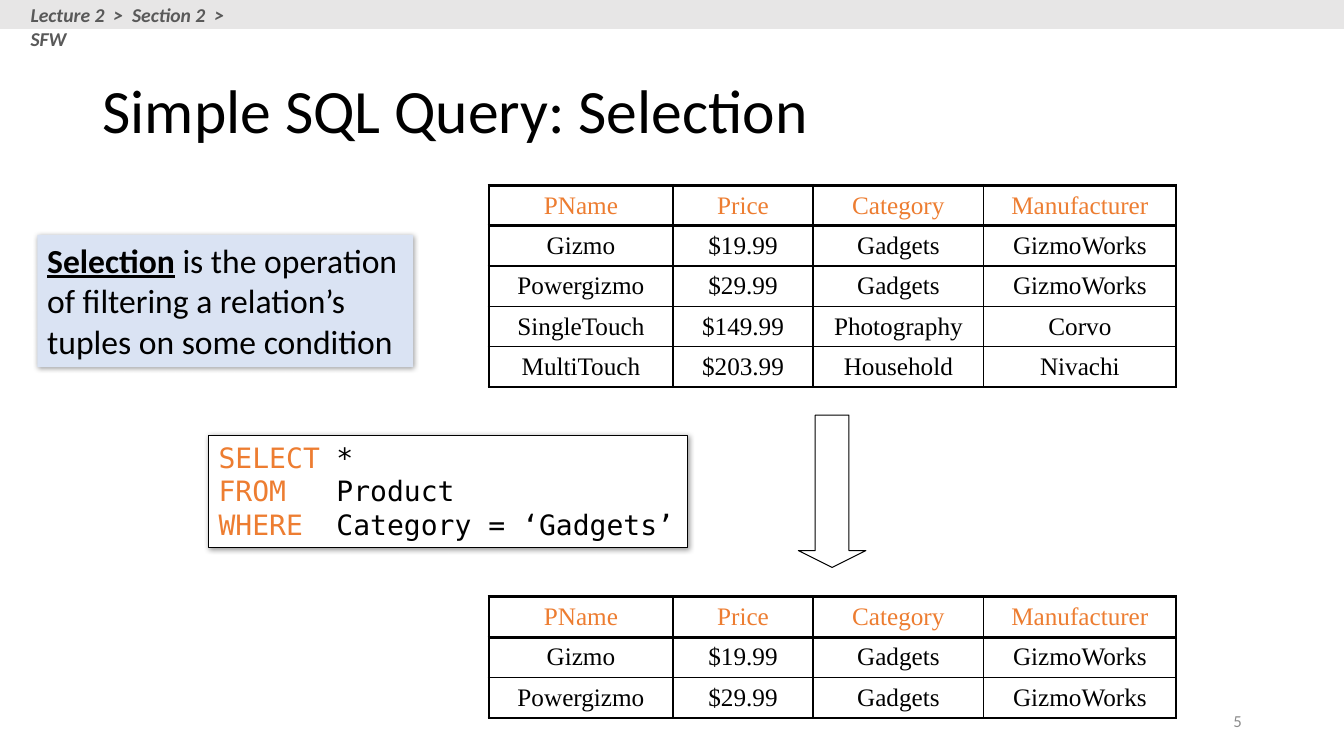
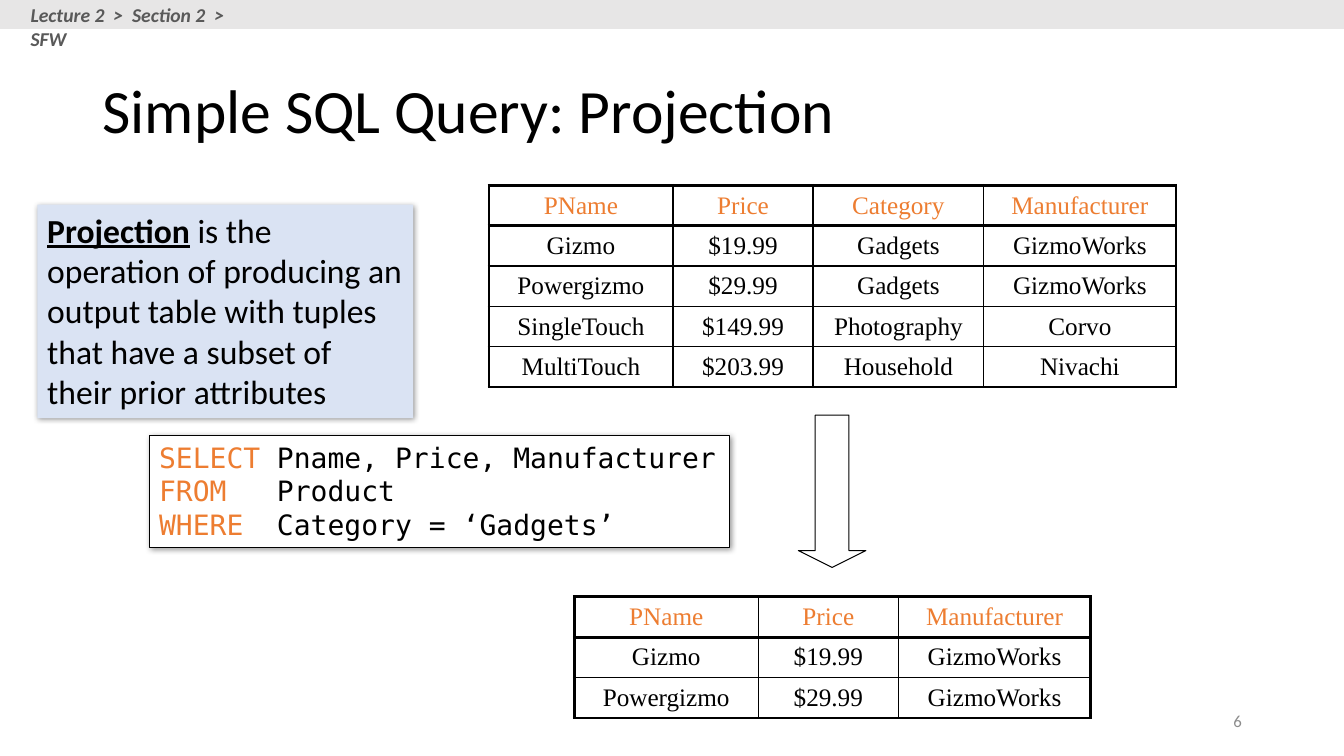
import pptx
import pptx.dml.color
import pptx.enum.shapes
import pptx.enum.text
import pptx.oxml
import pptx.oxml.ns
import pptx.util
from lxml import etree

Cm, Pt = pptx.util.Cm, pptx.util.Pt
SHAPE = pptx.enum.shapes.MSO_SHAPE
ALIGN = pptx.enum.text.PP_ALIGN
ANCHOR = pptx.enum.text.MSO_ANCHOR
qn = pptx.oxml.ns.qn
rgb = pptx.dml.color.RGBColor.from_string


class Theme:
    ink, accent, paper = "000000", "ED7D31", "FFFFFF"
    band, crumb, number, note = "E7E6E6", "595959", "8C8C8C", "DAE3F3"
    sans, serif, mono = "Calibri", "Times New Roman", "DejaVu Sans Mono"
    title_size, note_size, code_size = 44, 24, 20
    table_size, crumb_size, number_size = 18, 14, 12
    thick, thin, outline = 2.25, 1, 0.75


def add_run(paragraph, text, size, color=Theme.ink, font=Theme.sans, **styles):
    run = paragraph.add_run()
    run.text = text
    run.font.name, run.font.size = font, Pt(size)
    run.font.color.rgb = rgb(color)
    for style, value in styles.items():
        setattr(run.font, style, value)


def add_box(slide, preset, place, fill=None, line=None, shadow=False):
    box = slide.shapes.add_shape(preset, *map(Cm, place))
    if fill:
        box.fill.solid()
        box.fill.fore_color.rgb = rgb(fill)
    else:
        box.fill.background()
    if line:
        box.line.color.rgb = rgb(line)
        box.line.width = Pt(Theme.outline)
    else:
        box.line.fill.background()
    box.shadow.inherit = False
    if shadow:
        effects = box._element.spPr.find(qn("a:effectLst"))
        cast = etree.SubElement(effects, qn("a:outerShdw"), blurRad=str(Pt(4)),
                                dist=str(Pt(1)), dir="2700000", algn="tl", rotWithShape="0")
        tint = etree.SubElement(cast, qn("a:srgbClr"), val=Theme.ink)
        etree.SubElement(tint, qn("a:alpha"), val="40000")
    box.text_frame.vertical_anchor = ANCHOR.TOP
    box.text_frame.paragraphs[0].alignment = ALIGN.LEFT
    return box


# Content
column_widths = {"PName": 4.64, "Price": 3.53, "Category": 4.3, "Manufacturer": 4.85}
products = [
    ("Gizmo", "$19.99", "Gadgets", "GizmoWorks"),
    ("Powergizmo", "$29.99", "Gadgets", "GizmoWorks"),
    ("SingleTouch", "$149.99", "Photography", "Corvo"),
    ("MultiTouch", "$203.99", "Household", "Nivachi"),
]
products = [dict(zip(column_widths, product)) for product in products]
gadgets = [product for product in products if product["Category"] == "Gadgets"]
tables_center = 20.98
code_tab = 2.97

lessons = [
    dict(number="5", term="Selection",
         meaning=" is the operation of filtering a relation’s tuples on some condition",
         note_place=(0.94, 5.92, 9.47, 3.33),
         selected="*", code_place=(5.26, 10.97, 12.06, 2.82),
         kept=list(column_widths)),
    dict(number="6", term="Projection",
         meaning=" is the operation of producing an output table with tuples "
                 "that have a subset of their prior attributes",
         note_place=(0.94, 5.16, 9.47, 5.38),
         selected="Pname, Price, Manufacturer", code_place=(3.76, 10.97, 14.63, 2.82),
         kept=["PName", "Price", "Manufacturer"]),
]

deck = pptx.Presentation()
deck.slide_width, deck.slide_height = Cm(33.87), Cm(19.05)

for lesson in lessons:
    slide = deck.slides.add_slide(deck.slide_layouts[5])

    # Title
    title = slide.shapes.title
    title.left, title.top, title.width, title.height = map(Cm, (2.33, 1.02, 29.21, 3.68))
    title.text_frame.vertical_anchor = ANCHOR.MIDDLE
    heading = title.text_frame.paragraphs[0]
    heading.alignment, heading.line_spacing = ALIGN.LEFT, 0.9
    add_run(heading, "Simple SQL Query: " + lesson["term"], Theme.title_size)

    # Top band with breadcrumb, and page number
    add_box(slide, SHAPE.RECTANGLE, (0, 0, 33.87, 0.73), Theme.band)
    breadcrumb = slide.shapes.add_textbox(*map(Cm, (0.52, -0.05, 6, 0.86))).text_frame
    breadcrumb.word_wrap = True
    add_run(breadcrumb.paragraphs[0], "Lecture 2  >  Section 2  >  SFW", Theme.crumb_size,
            Theme.crumb, bold=True, italic=True)
    page = slide.shapes.add_textbox(*map(Cm, (23.93, 17.65, 7.62, 1.02))).text_frame
    page.word_wrap, page.vertical_anchor = True, ANCHOR.MIDDLE
    page.paragraphs[0].alignment = ALIGN.RIGHT
    add_run(page.paragraphs[0], lesson["number"], Theme.number_size, Theme.number)

    # Product table above, query result below
    for records, columns, top, row_height in [
        (products, list(column_widths), 4.67, 1.01),
        (gadgets, lesson["kept"], 15.04, 0.97),
    ]:
        width = sum(column_widths[column] for column in columns)
        last_row, last_column = len(records), len(columns) - 1
        relation = slide.shapes.add_table(
            last_row + 1, len(columns), Cm(tables_center - width / 2), Cm(top),
            Cm(width), Cm(row_height * (last_row + 1))).table
        relation.first_row = relation.horz_banding = False
        for c, column in enumerate(columns):
            relation.columns[c].width = Cm(column_widths[column])
            for r, text in enumerate([column] + [record[column] for record in records]):
                relation.rows[r].height = Cm(row_height)
                cell = relation.cell(r, c)
                cell.vertical_anchor = ANCHOR.MIDDLE
                entry = cell.text_frame.paragraphs[0]
                entry.alignment = ALIGN.CENTER
                add_run(entry, text, Theme.table_size,
                        Theme.ink if r else Theme.accent, Theme.serif)
                # Thick frame and header rule, thin rules inside
                for side, is_thick in [("L", c == 0), ("R", c == last_column),
                                       ("T", r < 2), ("B", r in (0, last_row))]:
                    weight = Theme.thick if is_thick else Theme.thin
                    rule = etree.SubElement(cell._tc.get_or_add_tcPr(), qn("a:ln" + side),
                                            w=str(Pt(weight)))
                    ink = etree.SubElement(rule, qn("a:solidFill"))
                    etree.SubElement(ink, qn("a:srgbClr"), val=Theme.ink)
                cell.fill.background()

    # Arrow from the table to the result
    arrow = add_box(slide, SHAPE.DOWN_ARROW, (20.12, 10.46, 1.7, 3.84), line=Theme.ink)
    arrow.adjustments[1] = 0.25

    # Query
    query = add_box(slide, SHAPE.RECTANGLE, lesson["code_place"], Theme.paper, Theme.ink,
                    shadow=True).text_frame
    query.word_wrap = False
    clauses = [("SELECT", lesson["selected"]), ("FROM", "Product"),
               ("WHERE", "Category = ‘Gadgets’")]
    for i, (keyword, operand) in enumerate(clauses):
        clause = query.paragraphs[0] if i == 0 else query.add_paragraph()
        clause.alignment = ALIGN.LEFT
        tabs = etree.SubElement(clause._p.get_or_add_pPr(), qn("a:tabLst"))
        etree.SubElement(tabs, qn("a:tab"), pos=str(Cm(code_tab)), algn="l")
        add_run(clause, keyword, Theme.code_size, Theme.accent, Theme.mono)
        add_run(clause, "\t" + operand, Theme.code_size, font=Theme.mono)

    # Definition
    definition = add_box(slide, SHAPE.RECTANGLE, lesson["note_place"], Theme.note,
                         shadow=True).text_frame
    definition.word_wrap = True
    add_run(definition.paragraphs[0], lesson["term"], Theme.note_size,
            bold=True, underline=True)
    add_run(definition.paragraphs[0], lesson["meaning"], Theme.note_size)

deck.save("out.pptx")
